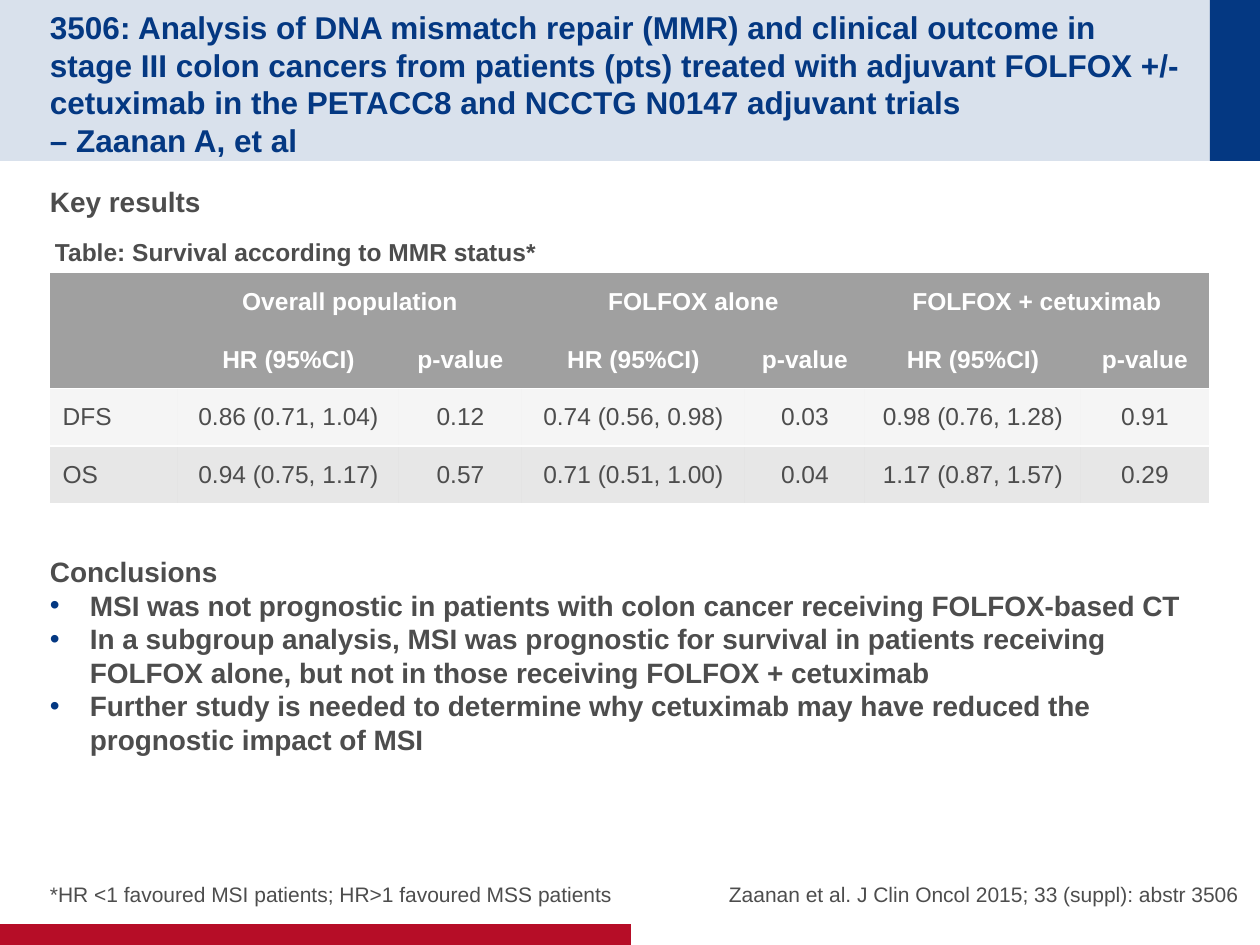
from lxml.etree import SubElement
from pptx import Presentation
from pptx.dml.color import RGBColor
from pptx.enum.shapes import MSO_SHAPE
from pptx.enum.text import MSO_ANCHOR, PP_ALIGN
from pptx.oxml import parse_xml
from pptx.oxml.ns import nsdecls, qn
from pptx.util import Pt

NAVY = RGBColor(0x04, 0x38, 0x82)
RED = RGBColor(0xB6, 0x0D, 0x27)
GREY = RGBColor(0xA0, 0xA0, 0xA0)
TEXT = RGBColor(0x4D, 0x4D, 0x4D)
WHITE = RGBColor(0xFF, 0xFF, 0xFF)
FONT = "Arial"
NO_TABLE_STYLE = "{2D5ABB26-0587-4C30-8999-92F81FD0307C}"

TITLE = [
    "3506: Analysis of DNA mismatch repair (MMR) and clinical outcome in stage III colon "
    "cancers from patients (pts) treated with adjuvant FOLFOX +/- cetuximab in the PETACC8 "
    "and NCCTG N0147 adjuvant trials",
    "– Zaanan A, et al",
]
CONCLUSIONS = [
    "MSI was not prognostic in patients with colon cancer receiving FOLFOX-based CT",
    "In a subgroup analysis, MSI was prognostic for survival in patients receiving "
    "FOLFOX alone, but not in those receiving FOLFOX + cetuximab",
    "Further study is needed to determine why cetuximab may have reduced the "
    "prognostic impact of MSI",
]
CAPTION = "Table: Survival according to MMR status*"
FOOTNOTE = "*HR <1 favoured MSI patients; HR>1 favoured MSS patients"
REFERENCE = "Zaanan et al. J Clin Oncol 2015; 33 (suppl): abstr 3506"

GROUPS = ["Overall population", "FOLFOX alone", "FOLFOX + cetuximab"]
MEASURES = ["HR (95%CI)", "p-value"]
RESULTS = [
    ["DFS", "0.86 (0.71, 1.04)", "0.12", "0.74 (0.56, 0.98)", "0.03", "0.98 (0.76, 1.28)", "0.91"],
    ["OS", "0.94 (0.75, 1.17)", "0.57", "0.71 (0.51, 1.00)", "0.04", "1.17 (0.87, 1.57)", "0.29"],
]
COLUMN_WIDTHS = [128, 221, 123, 223, 120, 216, 128]
HEADER_ROWS = 2
ROW_OPACITY = [100, 100, 10, 25]

# left, top, width, height, colour, opacity in percent
BANDS = [
    (0, 0, 1260, 161, NAVY, 15),
    (1210, 0, 50, 161, NAVY, 100),
    (0, 924, 631, 21, RED, 100),
]


def px(length):
    return round(length * 914400 / 126)


def set_fill(fill, color, opacity):
    """Fill with a colour at an opacity given in percent."""
    fill.solid()
    fill.fore_color.rgb = color
    if opacity < 100:
        color_element = fill._xPr.find(qn("a:solidFill"))[0]
        SubElement(color_element, qn("a:alpha"), val=str(opacity * 1000))


def add_run(paragraph, text, size, color=TEXT, bold=False):
    run = paragraph.add_run()
    run.text = text
    font = run.font
    font.name, font.size, font.bold = FONT, Pt(size), bold
    font.color.rgb = color


def add_text_frame(slide, box, insets, anchor=MSO_ANCHOR.TOP):
    """Add a wrapping text box; insets are left, top, right and bottom in px."""
    frame = slide.shapes.add_textbox(*map(px, box)).text_frame
    frame.word_wrap = True
    frame.vertical_anchor = anchor
    (frame.margin_left, frame.margin_top,
     frame.margin_right, frame.margin_bottom) = map(px, insets)
    return frame


def add_bullet(paragraph):
    properties = paragraph._p.get_or_add_pPr()
    properties.set("marL", str(px(40)))
    properties.set("indent", str(px(-40)))
    color = SubElement(properties, qn("a:buClr"))
    SubElement(color, qn("a:srgbClr"), val=str(NAVY))
    SubElement(properties, qn("a:buFont"), typeface=FONT)
    SubElement(properties, qn("a:buChar"), char="•")


def add_rule(cell, sides):
    """Draw white 1 pt borders on the named sides, ahead of the cell's fill."""
    for position, side in enumerate(sides):
        cell._tc.get_or_add_tcPr().insert(position, parse_xml(
            f'<a:{side} {nsdecls("a")} w="12700"><a:solidFill>'
            f'<a:srgbClr val="{WHITE}"/></a:solidFill></a:{side}>'))


def add_bands(slide):
    for left, top, width, height, color, opacity in BANDS:
        band = slide.shapes.add_shape(
            MSO_SHAPE.RECTANGLE, *map(px, (left, top, width, height)))
        band.shadow.inherit = False
        band.line.fill.background()
        set_fill(band.fill, color, opacity)


def add_title(slide):
    frame = add_text_frame(slide, (50, 25, 1135, 111), (0, 6, 0, 0), MSO_ANCHOR.MIDDLE)
    paragraph = frame.paragraphs[0]
    for index, line in enumerate(TITLE):
        if index:
            paragraph.add_line_break()
        add_run(paragraph, line, 18, NAVY, True)


def add_body(slide):
    frame = add_text_frame(slide, (50, 179, 1158, 590), (0, 6, 13, 6))
    add_run(frame.paragraphs[0], "Key results", 16, bold=True)
    heading = frame.add_paragraph()
    heading.space_before = Pt(192)
    add_run(heading, "Conclusions", 16, bold=True)
    for conclusion in CONCLUSIONS:
        paragraph = frame.add_paragraph()
        add_bullet(paragraph)
        add_run(paragraph, conclusion, 16, bold=True)


def add_results_table(slide):
    group_row = [""] + [text for group in GROUPS for text in (group, "")]
    rows = [group_row, [""] + MEASURES * len(GROUPS)] + RESULTS
    graphic_frame = slide.shapes.add_table(
        len(rows), len(COLUMN_WIDTHS), px(50), px(273), px(sum(COLUMN_WIDTHS)), px(231))
    next(graphic_frame._element.iter(qn("a:tableStyleId"))).text = NO_TABLE_STYLE
    table = graphic_frame.table
    table.horz_banding = False
    for column, width in zip(table.columns, COLUMN_WIDTHS):
        column.width = px(width)
    for column in range(1, len(COLUMN_WIDTHS), len(MEASURES)):
        table.cell(0, column).merge(table.cell(0, column + len(MEASURES) - 1))

    for row_index, row in enumerate(rows):
        is_header = row_index < HEADER_ROWS
        for column, text in enumerate(row):
            cell = table.cell(row_index, column)
            cell.vertical_anchor = MSO_ANCHOR.MIDDLE
            set_fill(cell.fill, GREY, ROW_OPACITY[row_index])
            if not is_header:
                add_rule(cell, ["lnT", "lnB"])
            elif row_index == HEADER_ROWS - 1:
                add_rule(cell, ["lnB"])
            if text:
                paragraph = cell.text_frame.paragraphs[0]
                paragraph.alignment = PP_ALIGN.CENTER if column else PP_ALIGN.LEFT
                paragraph.space_before = Pt(3)
                add_run(paragraph, text, 14, WHITE if is_header else TEXT, is_header)


def add_caption(slide):
    frame = add_text_frame(slide, (42, 231, 530, 43), (13, 6, 0, 6))
    add_run(frame.paragraphs[0], CAPTION, 14, bold=True)


def add_footers(slide):
    for text, box, alignment in (
        (FOOTNOTE, (50, 872, 570, 35), PP_ALIGN.LEFT),
        (REFERENCE, (640, 840, 599, 67), PP_ALIGN.RIGHT),
    ):
        frame = add_text_frame(slide, box, (0, 0, 0, 0), MSO_ANCHOR.BOTTOM)
        paragraph = frame.paragraphs[0]
        paragraph.alignment = alignment
        paragraph.space_after = Pt(4)
        add_run(paragraph, text, 12)


def main():
    presentation = Presentation()
    presentation.slide_width, presentation.slide_height = px(1260), px(945)
    slide = presentation.slides.add_slide(presentation.slide_layouts[6])
    for add_part in (add_bands, add_body, add_title, add_footers,
                     add_results_table, add_caption):
        add_part(slide)
    presentation.save("out.pptx")


if __name__ == "__main__":
    main()
